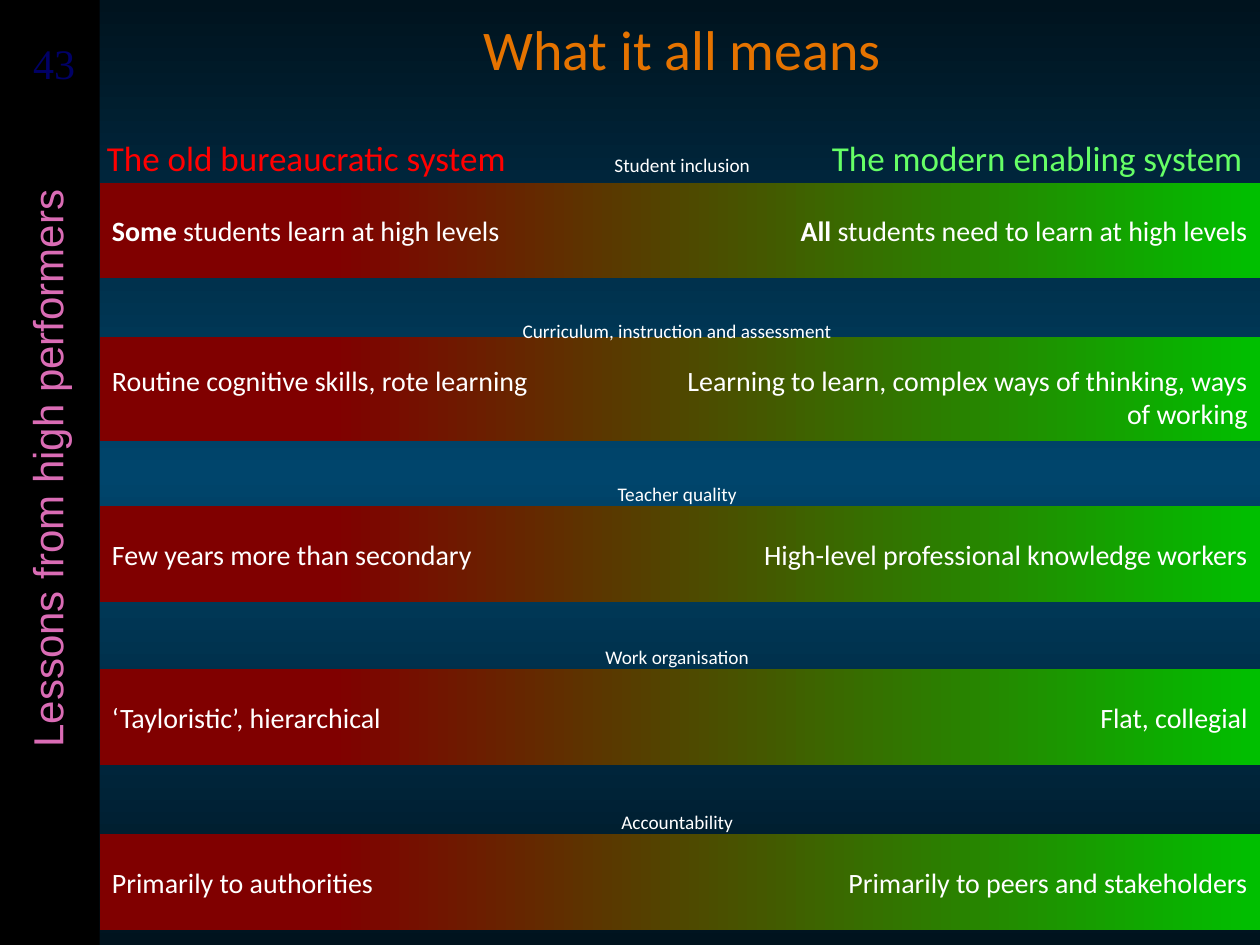
"""Build a slide contrasting the old bureaucratic and modern enabling systems."""
from copy import deepcopy
from dataclasses import dataclass

from pptx import Presentation
from pptx.dml.color import RGBColor
from pptx.dml.fill import FillFormat
from pptx.enum.shapes import MSO_SHAPE
from pptx.enum.text import MSO_ANCHOR, MSO_AUTO_SIZE, PP_ALIGN
from pptx.oxml.ns import qn
from pptx.oxml.xmlchemy import BaseOxmlElement
from pptx.shapes.autoshape import Shape
from pptx.slide import Slide
from pptx.text.text import TextFrame
from pptx.util import Pt

LEFT, CENTER, RIGHT = PP_ALIGN.LEFT, PP_ALIGN.CENTER, PP_ALIGN.RIGHT
TOP, MIDDLE = MSO_ANCHOR.TOP, MSO_ANCHOR.MIDDLE
GROW = MSO_AUTO_SIZE.SHAPE_TO_FIT_TEXT
RECTANGLE = MSO_SHAPE.RECTANGLE

Stops = tuple[tuple[float, str], ...]


@dataclass(frozen=True)
class Theme:
    font: str = "Calibri"
    side_font: str = "Arial"
    number_font: str = "Times New Roman"
    title_size: float = 32
    side_size: float = 24
    heading_size: float = 20
    body_size: float = 16
    label_size: float = 11
    white: str = "FFFFFF"
    black: str = "000000"
    title: str = "E57300"
    side: str = "DA6CB5"
    number: str = "000066"
    old: str = "FF0000"
    modern: str = "66FF66"
    background: Stops = ((0, "00131E"), (0.5, "00456C"), (1, "00131E"))
    band: Stops = ((0.2, "800000"), (1, "00BF00"))


@dataclass(frozen=True)
class Box:
    left: float
    top: float
    width: float
    height: float

    def lengths(self) -> tuple[Pt, Pt, Pt, Pt]:
        return Pt(self.left), Pt(self.top), Pt(self.width), Pt(self.height)


@dataclass(frozen=True)
class Row:
    label: str
    label_top: float
    band_top: float
    old: str
    modern: str
    old_lead: str = ""
    modern_lead: str = ""
    label_left: float = 56.9
    height: float = 54.7
    inset_top: float = 14.4
    inset_bottom: float = 14.4


THEME = Theme()
SLIDE_WIDTH, SLIDE_HEIGHT = 720, 540
SIDEBAR_WIDTH = 56.9
LABEL_WIDTH, LABEL_HEIGHT = 660.2, 20.6
ROWS = (
    Row("Student inclusion", 84.2, 104.4, " students learn at high levels",
        "students need to learn at high levels", "Some", "All ", label_left=59.8),
    Row("Curriculum, instruction and assessment", 178.6, 192.8,
        "Routine cognitive skills, rote learning",
        "Learning to learn, complex ways of thinking, ways of working",
        height=59.5, inset_top=8.6, inset_bottom=0),
    Row("Teacher quality", 272.2, 289.2, "Few years more than secondary",
        "High-level professional knowledge workers"),
    Row("Work organisation", 365, 382.3, "‘Tayloristic’, hierarchical", "Flat, collegial"),
    Row("Accountability", 459.4, 476.6, "Primarily to authorities",
        "Primarily to peers and stakeholders"),
)


def apply_gradient(fill: FillFormat, owner: BaseOxmlElement, stops: Stops, angle: float) -> None:
    fill.gradient()
    fill.gradient_angle = angle
    stop_list = next(owner.iter(qn("a:gsLst")))
    while len(stop_list) < len(stops):
        stop_list.append(deepcopy(stop_list[0]))
    for stop, (position, color) in zip(fill.gradient_stops, stops):
        stop.position = position
        stop.color.rgb = RGBColor.from_string(color)


def write_text(frame: TextFrame, text: str, *, size: float, color: str, font: str = THEME.font,
               align: PP_ALIGN = LEFT, lead: str = "", spacing: float = 0,
               new_paragraph: bool = False) -> None:
    paragraph = frame.add_paragraph() if new_paragraph else frame.paragraphs[0]
    paragraph.alignment = align
    paragraph.space_before = paragraph.space_after = Pt(spacing)
    for content, bold in ((lead, True), (text, False)):
        if content:
            run = paragraph.add_run()
            run.text = content
            run.font.name = font
            run.font.size = Pt(size)
            run.font.bold = bold
            run.font.color.rgb = RGBColor.from_string(color)


def add_text_box(slide: Slide, box: Box, text: str, *, anchor: MSO_ANCHOR = MIDDLE,
                 rotation: float = 0, **text_format) -> None:
    shape = slide.shapes.add_textbox(*box.lengths())
    shape.rotation = rotation
    shape.text_frame.word_wrap = True
    shape.text_frame.vertical_anchor = anchor
    write_text(shape.text_frame, text, **text_format)


def add_rectangle(slide: Slide, box: Box) -> Shape:
    shape = slide.shapes.add_shape(RECTANGLE, *box.lengths())
    shape.shadow.inherit = False
    shape.line.fill.background()
    return shape


def add_row(slide: Slide, row: Row) -> None:
    band = add_rectangle(
        slide, Box(SIDEBAR_WIDTH, row.band_top, SLIDE_WIDTH - SIDEBAR_WIDTH, row.height))
    apply_gradient(band.fill, band.element, THEME.band, 0)
    frame = band.text_frame
    frame.word_wrap = True
    frame.auto_size = GROW
    frame.vertical_anchor = MIDDLE
    frame.margin_left = frame.margin_right = Pt(7.2)
    frame.margin_top, frame.margin_bottom = Pt(row.inset_top), Pt(row.inset_bottom)
    band.element.txBody.bodyPr.set("numCol", "2")
    body = dict(size=THEME.body_size, color=THEME.white, spacing=12)
    write_text(frame, row.old, lead=row.old_lead, **body)
    write_text(frame, row.modern, lead=row.modern_lead, align=RIGHT, new_paragraph=True, **body)
    add_text_box(slide, Box(row.label_left, row.label_top, LABEL_WIDTH, LABEL_HEIGHT), row.label,
                 anchor=TOP, size=THEME.label_size, color=THEME.white, align=CENTER)


def add_sidebar(slide: Slide) -> None:
    sidebar = add_rectangle(slide, Box(0, 0, SIDEBAR_WIDTH, SLIDE_HEIGHT))
    sidebar.fill.solid()
    sidebar.fill.fore_color.rgb = RGBColor.from_string(THEME.black)
    add_text_box(slide, Box(-224.6, 249.8, 502.6, 36), "Lessons from high performers",
                 anchor=TOP, rotation=270, size=THEME.side_size, color=THEME.side,
                 font=THEME.side_font, align=CENTER)
    add_text_box(slide, Box(4, 18, 54, 36), "43", size=THEME.side_size, color=THEME.number,
                 font=THEME.number_font, align=CENTER)


def main() -> None:
    presentation = Presentation()
    presentation.slide_width, presentation.slide_height = Pt(SLIDE_WIDTH), Pt(SLIDE_HEIGHT)
    slide = presentation.slides.add_slide(presentation.slide_layouts[6])
    apply_gradient(slide.background.fill, slide.element, THEME.background, 270)
    add_sidebar(slide)
    for row in ROWS:
        add_row(slide, row)
    add_text_box(slide, Box(59.8, 0, 660.2, 54.7), "What it all means",
                 size=THEME.title_size, color=THEME.title, align=CENTER)
    add_text_box(slide, Box(54, 62.6, 345.6, 54.7), "The old bureaucratic system",
                 size=THEME.heading_size, color=THEME.old)
    add_text_box(slide, Box(371.5, 62.6, 345.6, 54.7), "The modern enabling system",
                 size=THEME.heading_size, color=THEME.modern, align=RIGHT)
    presentation.save("out.pptx")


if __name__ == "__main__":
    main()
